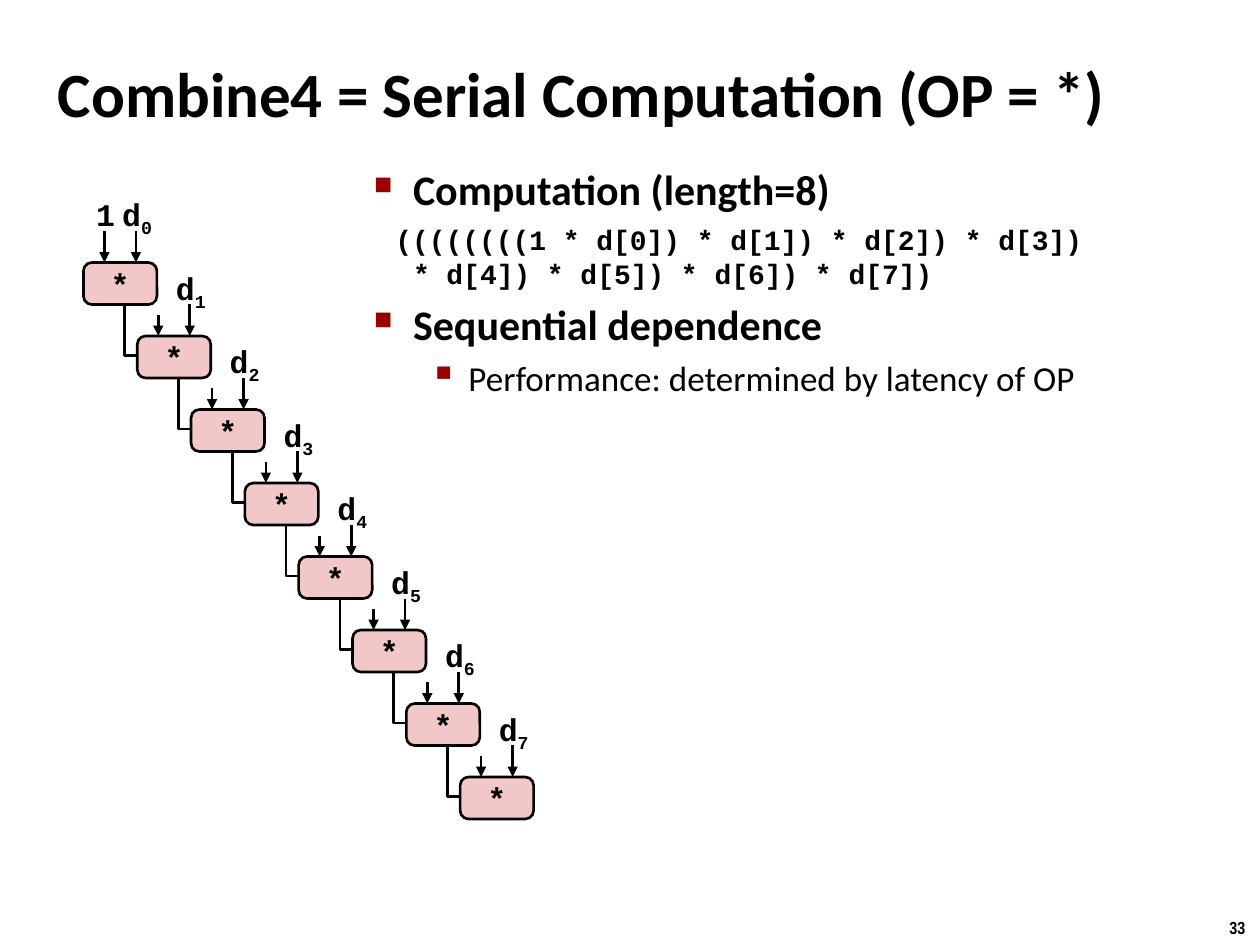
from dataclasses import dataclass

from lxml import etree
from pptx import Presentation
from pptx import util as u
from pptx.dml import color
from pptx.enum import shapes, text
from pptx.oxml import ns

COLORS = {"ink": "000000", "box": "F1C7C7", "bullet": "990000"}
UNIT = u.Inches(1 / 12)
COL_STEP, ROW_STEP = 5.125, 7
BOX_W, BOX_H = 7, 4
LABEL_H = 4.8
ARROWS = (2, 5)
CODE = {"name": "Courier New", "size": u.Pt(18), "bold": True}


@dataclass(frozen=True)
class Para:
    words: str
    fmt: dict
    margin: float
    indent: float
    before: float
    bullet: str = ""
    bullet_pct: int = 100


@dataclass(frozen=True)
class Stage:
    index: int

    @property
    def col(self) -> float:
        return 7.95 + self.index * COL_STEP

    @property
    def row(self) -> float:
        return 25 + self.index * ROW_STEP


HEAD = {"name": "Calibri", "size": u.Pt(24), "bold": True}
PARAS = [
    Para("Computation (length=8)", HEAD, 0.31, -0.31, 5, "■", 60),
    Para("((((((((1 * d[0]) * d[1]) * d[2]) * d[3])\v* d[4]) * d[5]) * d[6]) * d[7])",
         CODE | {"size": u.Pt(16)}, 0.31, -0.14, 5),
    Para("Sequential dependence", HEAD, 0.31, -0.31, 5, "■", 60),
    Para("Performance: determined by latency of OP",
         HEAD | {"size": u.Pt(20), "bold": False}, 0.75, -0.31, 4, "▪", 110),
]


def grid(n: float) -> int:
    return round(n * UNIT)


def rgb(key: str) -> color.RGBColor:
    return color.RGBColor.from_string(COLORS[key])


def style(p, fmt: dict) -> None:
    for r in p.runs:
        for key, value in fmt.items():
            setattr(r.font, key, value)
        r.font.color.rgb = rgb("ink")


def outline(sp) -> None:
    sp.line.color.rgb = rgb("ink")
    sp.line.width = u.Pt(1.5)


def add_arrow(s, x: float, top: float, bottom: float) -> None:
    sp = s.shapes.add_connector(shapes.MSO_CONNECTOR.STRAIGHT, *map(grid, (x, top, x, bottom)))
    outline(sp)
    etree.SubElement(sp.line._get_or_add_ln(), ns.qn("a:tailEnd"), type="triangle")
    etree.SubElement(sp._element.spPr, ns.qn("a:effectLst"))


def add_label(s, x: float, y: float, w: float, base: str, sub: str = "") -> None:
    tf = s.shapes.add_textbox(*map(grid, (x, y, w, LABEL_H))).text_frame
    tf.word_wrap = True
    for side in ("left", "top", "right", "bottom"):
        setattr(tf, f"margin_{side}", u.Inches(0.05))
    p = tf.paragraphs[0]
    p.alignment = text.PP_ALIGN.CENTER
    p.add_run().text = base
    if sub:
        r = p.add_run()
        r.text = sub
        r._r.get_or_add_rPr().set("baseline", "-25000")
    style(p, CODE)


def add_box(s, stage: Stage) -> None:
    sp = s.shapes.add_shape(shapes.MSO_SHAPE.ROUNDED_RECTANGLE,
                            *map(grid, (stage.col, stage.row, BOX_W, BOX_H)))
    sp.adjustments[0] = 0.2
    sp.shadow.inherit = False
    sp.fill.solid()
    sp.fill.fore_color.rgb = rgb("box")
    outline(sp)
    tf = sp.text_frame
    tf.word_wrap = False
    tf.vertical_anchor = text.MSO_ANCHOR.MIDDLE
    p = tf.paragraphs[0]
    p.text = "*"
    p.alignment = text.PP_ALIGN.CENTER
    style(p, CODE)


def add_elbow(s, stage: Stage) -> None:
    x, top, bottom = stage.col - 1.2, stage.row - 3, stage.row + 1.85
    fb = s.shapes.build_freeform(grid(x), grid(top))
    fb.add_line_segments([(grid(x), grid(bottom)), (grid(stage.col), grid(bottom))], close=False)
    sp = fb.convert_to_shape()
    sp.fill.background()
    sp.shadow.inherit = False
    outline(sp)


def add_stage(s, stage: Stage) -> None:
    add_box(s, stage)
    lengths = (2 if stage.index else 3, 3)
    for offset, length in zip(ARROWS, lengths):
        add_arrow(s, stage.col + offset, stage.row - length, stage.row)
    if stage.index:
        add_elbow(s, stage)
    else:
        add_label(s, stage.col + 0.6, stage.row - ROW_STEP, 3, "1")
    add_label(s, stage.col + 3, stage.row - ROW_STEP, 4.2, "d", str(stage.index))


def add_para(p, para: Para) -> None:
    p.text = para.words
    p.space_before = u.Pt(para.before)
    style(p, para.fmt)
    pPr = p._p.get_or_add_pPr()
    pPr.set("marL", str(u.Inches(para.margin)))
    pPr.set("indent", str(u.Inches(para.indent)))
    if para.bullet:
        clr = etree.SubElement(pPr, ns.qn("a:buClr"))
        etree.SubElement(clr, ns.qn("a:srgbClr"), val=COLORS["bullet"])
        etree.SubElement(pPr, ns.qn("a:buSzPct"), val=str(para.bullet_pct * 1000))
        etree.SubElement(pPr, ns.qn("a:buChar"), char=para.bullet)


def add_title(s, words: str) -> None:
    sp = s.shapes.title
    place = {"left": 0.36, "top": 0.31, "width": 9.48, "height": 0.85}
    for key, value in place.items():
        setattr(sp, key, u.Inches(value))
    tf = sp.text_frame
    tf.vertical_anchor = text.MSO_ANCHOR.MIDDLE
    p = tf.paragraphs[0]
    p.text = words
    p.alignment = text.PP_ALIGN.LEFT
    style(p, HEAD | {"size": u.Pt(36)})


def add_body(s) -> None:
    tf = s.shapes.add_textbox(*map(u.Inches, (2.87, 1.25, 6.96, 1.83))).text_frame
    tf.word_wrap = True
    for i, para in enumerate(PARAS):
        add_para(tf.add_paragraph() if i else tf.paragraphs[0], para)


def add_page_number(s, number: str) -> None:
    tf = s.shapes.add_textbox(*map(u.Inches, (9.66, 7.23, 0.34, 0.27))).text_frame
    tf.word_wrap = False
    p = tf.paragraphs[0]
    p.text = number
    style(p, {"name": "Arial Narrow", "size": u.Pt(10), "bold": True})


def main() -> None:
    prs = Presentation()
    prs.slide_width, prs.slide_height = u.Inches(10), u.Inches(7.5)
    s = prs.slides.add_slide(prs.slide_layouts[5])
    add_title(s, "Combine4 = Serial Computation (OP = *)")
    add_body(s)
    for i in range(8):
        add_stage(s, Stage(i))
    add_page_number(s, "33")
    prs.save("out.pptx")


if __name__ == "__main__":
    main()
